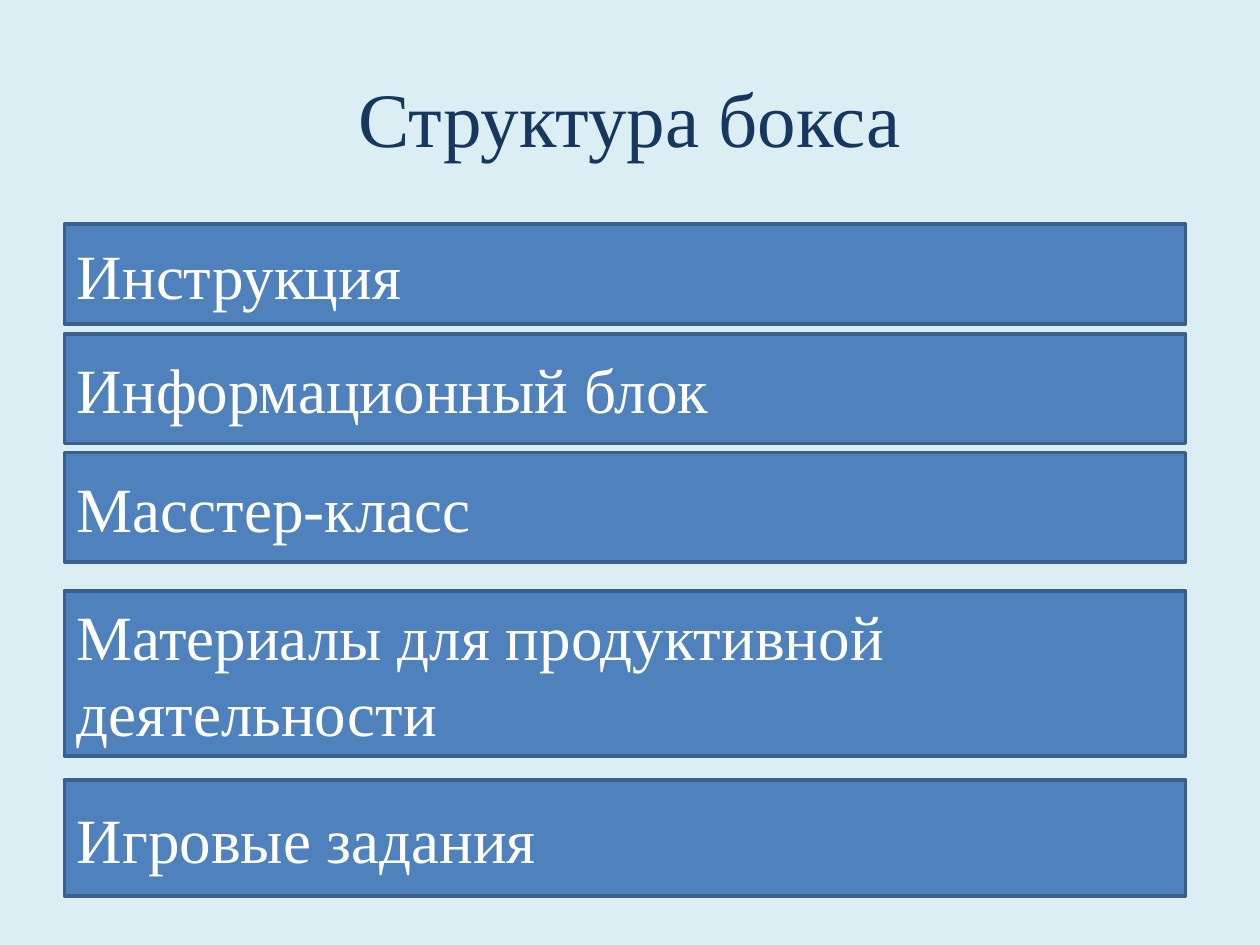
from pptx import Presentation
from pptx.dml.color import RGBColor
from pptx.enum.shapes import MSO_SHAPE
from pptx.enum.text import MSO_ANCHOR, PP_ALIGN
from pptx.util import Cm, Pt

TITLE = "Структура бокса"
BARS = [
    ("Инструкция", 4.52, 2.01),
    ("Информационный блок", 6.73, 2.21),
    ("Масстер-класс", 9.12, 2.21),
    ("Материалы для продуктивной деятельности", 11.91, 3.33),
    ("Игровые задания", 15.72, 2.34),
]
BAR_LEFT, BAR_WIDTH = 1.3, 22.6
FONT = "Times New Roman"
COLORS = {"bg": "DBEEF4", "title": "17375E", "bar": "4F81BD",
          "line": "3A5F8C", "text": "FFFFFF"}


def rgb(name):
    return RGBColor.from_string(COLORS[name])


def write(sp, text, size, color, align):
    tf = sp.text_frame
    tf.text = text
    tf.word_wrap = True
    tf.vertical_anchor = MSO_ANCHOR.MIDDLE
    p = tf.paragraphs[0]
    p.alignment = align
    font = p.runs[0].font
    font.name = FONT
    font.size = Pt(size)
    font.color.rgb = rgb(color)


def add_bar(s, text, top, height):
    sp = s.shapes.add_shape(MSO_SHAPE.RECTANGLE, Cm(BAR_LEFT), Cm(top),
                            Cm(BAR_WIDTH), Cm(height))
    sp.shadow.inherit = False
    sp.fill.solid()
    sp.fill.fore_color.rgb = rgb("bar")
    sp.line.color.rgb = rgb("line")
    sp.line.width = Pt(2)
    write(sp, text, 36, "text", PP_ALIGN.LEFT)


def main():
    prs = Presentation()
    prs.slide_width, prs.slide_height = Cm(25.4), Cm(19.05)
    s = prs.slides.add_slide(prs.slide_layouts[6])
    s.background.fill.solid()
    s.background.fill.fore_color.rgb = rgb("bg")

    title = s.shapes.add_textbox(Cm(1.27), Cm(0.76), Cm(22.86), Cm(3.18))
    write(title, TITLE, 44, "title", PP_ALIGN.CENTER)
    for text, top, height in BARS:
        add_bar(s, text, top, height)
    prs.save("out.pptx")


if __name__ == "__main__":
    main()
